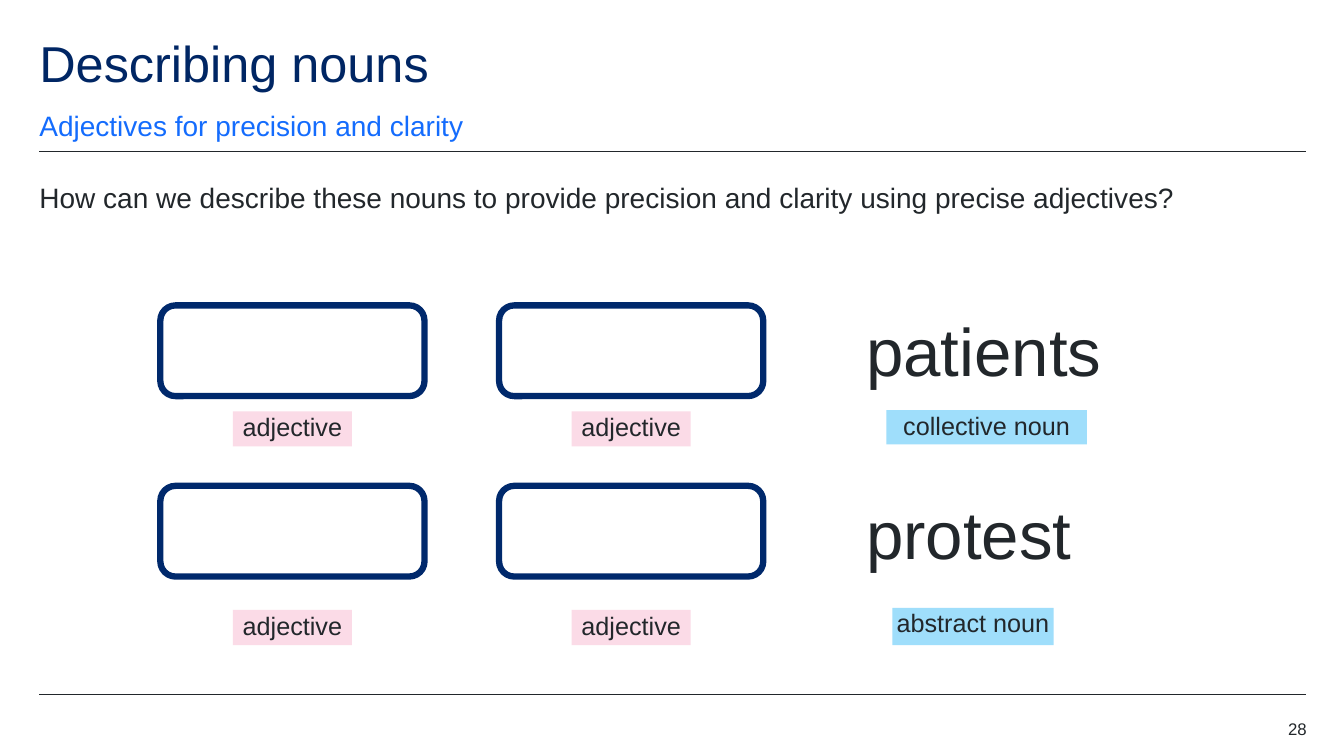
from dataclasses import dataclass

import pptx
import pptx.dml.color
import pptx.enum.shapes
import pptx.enum.text
import pptx.oxml
import pptx.util
from pptx.util import Inches

RGBColor = pptx.dml.color.RGBColor
Shape = pptx.enum.shapes.MSO_SHAPE
Align = pptx.enum.text.PP_ALIGN
Anchor = pptx.enum.text.MSO_ANCHOR

NAVY = RGBColor(0x00, 0x26, 0x64)
FRAME_NAVY = RGBColor(0x00, 0x29, 0x6C)
BLUE = RGBColor(0x14, 0x6C, 0xFD)
INK = RGBColor(0x22, 0x27, 0x2B)
PINK = RGBColor(0xFB, 0xDB, 0xE7)
SKY = RGBColor(0x9F, 0xDE, 0xFB)

MARGIN = 0.39
RIGHT = 12.95
RULE_TOPS = (1.5, 6.89)
FRAME_LEFTS = (1.59, 4.95)
FRAME_SIZE = (2.62, 0.9)
TAG_SIZE = (1.18, 0.35)
NOUN_LEFT = 8.59


@dataclass(frozen=True)
class Box:
    left: float
    top: float
    width: float
    height: float

    def emu(self) -> tuple:
        return tuple(Inches(v) for v in (self.left, self.top, self.width, self.height))


@dataclass(frozen=True)
class NounRow:
    noun: str
    noun_box: Box
    kind: str
    kind_box: Box
    frame_top: float
    tag_top: float


ROWS = (
    NounRow("patients", Box(NOUN_LEFT, 3.07, 2.4, 0.81),
            "collective noun", Box(8.79, 4.07, 1.99, 0.34), 3.03, 4.08),
    NounRow("protest", Box(NOUN_LEFT, 4.88, 2.13, 0.81),
            "abstract noun", Box(8.85, 6.03, 1.6, 0.37), 4.82, 6.05),
)


def write(sp, text: str, size: float, color=INK, align=Align.LEFT,
          anchor=Anchor.TOP, wrap: bool = True):
    tf = sp.text_frame
    tf.margin_left = tf.margin_top = tf.margin_right = tf.margin_bottom = 0
    tf.word_wrap = wrap
    tf.auto_size = pptx.enum.text.MSO_AUTO_SIZE.NONE
    tf.vertical_anchor = anchor
    p = tf.paragraphs[0]
    p.text = text
    p.alignment = align
    p.font.name = "Arial"
    p.font.size = pptx.util.Pt(size)
    p.font.color.rgb = color
    return p


def add_text(s, box: Box, text: str, size: float, **style):
    return write(s.shapes.add_textbox(*box.emu()), text, size, **style)


def add_rule(s, top: float) -> None:
    line = s.shapes.add_connector(
        pptx.enum.shapes.MSO_CONNECTOR.STRAIGHT,
        Inches(MARGIN), Inches(top), Inches(RIGHT), Inches(top))
    line.line.color.rgb = INK
    line.line.width = pptx.util.Pt(0.5)
    line._element.spPr.append(pptx.oxml.parse_xml(
        '<a:effectLst xmlns:a="http://schemas.openxmlformats.org/drawingml/2006/main"/>'))


def add_frame(s, box: Box) -> None:
    sp = s.shapes.add_shape(Shape.ROUNDED_RECTANGLE, *box.emu())
    sp.shadow.inherit = False
    sp.fill.background()
    sp.line.color.rgb = FRAME_NAVY
    sp.line.width = pptx.util.Pt(4.5)


def add_tag(s, box: Box, text: str, fill) -> None:
    sp = s.shapes.add_shape(Shape.RECTANGLE, *box.emu())
    sp.shadow.inherit = False
    sp.fill.solid()
    sp.fill.fore_color.rgb = fill
    sp.line.fill.background()
    write(sp, text, 18, align=Align.CENTER, wrap=False)


def add_row(s, row: NounRow) -> None:
    inset = (FRAME_SIZE[0] - TAG_SIZE[0]) / 2
    for left in FRAME_LEFTS:
        add_frame(s, Box(left, row.frame_top, *FRAME_SIZE))
        add_tag(s, Box(left + inset, row.tag_top, *TAG_SIZE), "adjective", PINK)
    add_text(s, row.noun_box, row.noun, 48)
    add_tag(s, row.kind_box, row.kind, SKY)


def main() -> None:
    prs = pptx.Presentation()
    prs.slide_width, prs.slide_height = Inches(13.33), Inches(7.5)
    s = prs.slides.add_slide(prs.slide_layouts.get_by_name("Title Only"))

    for top in RULE_TOPS:
        add_rule(s, top)

    title = s.shapes.title
    title.left, title.top, title.width, title.height = Box(MARGIN, 0.39, 11.02, 0.6).emu()
    p = write(title, "Describing nouns", 36, color=NAVY)
    p.line_spacing = 0.9

    p = add_text(s, Box(MARGIN, 1.07, 11.02, 0.34), "Adjectives for precision and clarity",
                 20, color=BLUE, anchor=Anchor.BOTTOM)
    p.line_spacing = 1.5
    p.space_after = pptx.util.Pt(12)

    add_text(s, Box(MARGIN, 1.79, 11.36, 0.78),
             "How can we describe these nouns to provide precision and clarity "
             "using precise adjectives?", 20)

    for row in ROWS:
        add_row(s, row)

    add_text(s, Box(12.17, 7.13, 0.79, 0.2), "28", 12, align=Align.RIGHT)
    prs.save("out.pptx")


if __name__ == "__main__":
    main()
